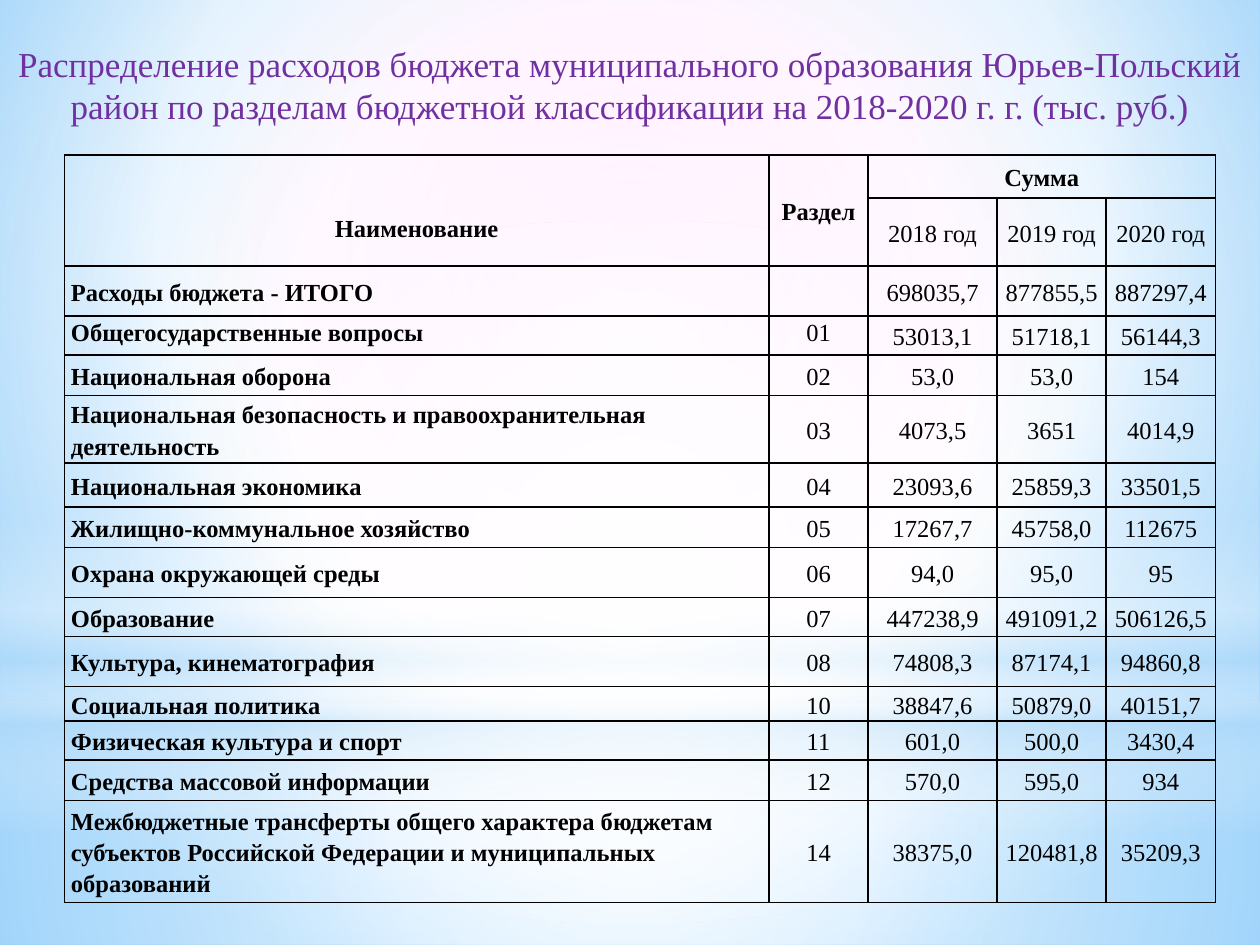
from lxml import etree
from pptx import Presentation
from pptx.dml.color import RGBColor
from pptx.enum import shapes, text
from pptx.oxml import parse_xml
from pptx.oxml.ns import qn
from pptx.util import Cm, Pt

COLORS = {"title": "7030A0", "ink": "000000", "white": "FFFFFF",
          "pink": "FFCCFF", "sky": "5BB9FF", "pale": "B4DCFA"}
FONT = "Times New Roman"
TITLE = ("Распределение расходов бюджета муниципального образования Юрьев-Польский "
         "район по разделам бюджетной классификации на 2018-2020 г. г. (тыс. руб.)")
HEADER = [
    ("Наименование", "Раздел", "Сумма", "", ""),
    ("", "", "2018 год", "2019 год", "2020 год"),
]
EXPENSES = [
    ("Расходы бюджета - ИТОГО", "", "698035,7", "877855,5", "887297,4"),
    ("Общегосударственные вопросы", "01", "53013,1", "51718,1", "56144,3"),
    ("Национальная оборона", "02", "53,0", "53,0", "154"),
    ("Национальная безопасность и правоохранительная деятельность",
     "03", "4073,5", "3651", "4014,9"),
    ("Национальная экономика", "04", "23093,6", "25859,3", "33501,5"),
    ("Жилищно-коммунальное хозяйство", "05", "17267,7", "45758,0", "112675"),
    ("Охрана окружающей среды", "06", "94,0", "95,0", "95"),
    ("Образование", "07", "447238,9", "491091,2", "506126,5"),
    ("Культура, кинематография", "08", "74808,3", "87174,1", "94860,8"),
    ("Социальная политика", "10", "38847,6", "50879,0", "40151,7"),
    ("Физическая культура и спорт", "11", "601,0", "500,0", "3430,4"),
    ("Средства массовой информации", "12", "570,0", "595,0", "934"),
    ("Межбюджетные трансферты общего характера бюджетам субъектов "
     "Российской Федерации и муниципальных образований",
     "14", "38375,0", "120481,8", "35209,3"),
]
COLUMN_WIDTHS = [14.2, 2, 2.6, 2.2, 2.2]
ROW_HEIGHTS = [0.87, 1.37, 1.01, 0.79, 0.81, 1.35, 0.89, 0.81,
               1.01, 0.79, 1.01, 0.69, 0.79, 0.81, 2.06]
TIGHT_ROW = 3

RECTANGLE = shapes.MSO_SHAPE.RECTANGLE
OVAL = shapes.MSO_SHAPE.OVAL
CENTER = (50, 50, 50, 50)
BACKGROUND_STOPS = [(0, "pink", 100), (60, "white", 100), (100, "sky", 100)]
GLOWS = [
    (RECTANGLE, 14.17, 4.88, CENTER,
     [(0, "white", 91), (37, "white", 76), (100, "pale", 79)]),
    (RECTANGLE, 0, 14.17, CENTER,
     [(0, "white", 89), (48, "white", 62), (100, "pale", 79)]),
    (RECTANGLE, 10.46, 6.35, None,
     [(0, "white", 0), (29, "white", 30), (45, "pale", 40),
      (55, "white", 26), (65, "pale", 60), (100, "white", 0)]),
    (OVAL, 4.45, 14.17, CENTER, [(0, "white", 100), (56, "white", 0)]),
]


def apply_gradient(fill, parent, stops, focus):
    fill.solid()
    stop_xml = "".join(
        f'<a:gs pos="{position * 1000}"><a:srgbClr val="{COLORS[color]}">'
        f'<a:alpha val="{opacity * 1000}"/></a:srgbClr></a:gs>'
        for position, color, opacity in stops)
    if focus:
        sides = " ".join(f'{side}="{value * 1000}"' for side, value in zip("ltrb", focus))
        direction = f'<a:path path="circle"><a:fillToRect {sides}/></a:path>'
    else:
        direction = '<a:lin ang="5400000" scaled="0"/>'
    gradient = parse_xml(
        '<a:gradFill xmlns:a="http://schemas.openxmlformats.org/drawingml/2006/main" '
        f'rotWithShape="1"><a:gsLst>{stop_xml}</a:gsLst>{direction}</a:gradFill>')
    parent.replace(parent.find(qn("a:solidFill")), gradient)


def style_runs(paragraph, size, color, bold=False):
    for run in paragraph.runs:
        run.font.name = FONT
        run.font.size = Pt(size)
        run.font.bold = bold
        run.font.color.rgb = RGBColor.from_string(COLORS[color])


def add_borders(cell):
    properties = cell._tc.get_or_add_tcPr()
    for side in ("lnL", "lnR", "lnT", "lnB"):
        line = etree.SubElement(properties, qn(f"a:{side}"), w=str(Pt(1)))
        solid = etree.SubElement(line, qn("a:solidFill"))
        etree.SubElement(solid, qn("a:srgbClr"), val=COLORS["ink"])


def fill_cell(cell, value, row, column):
    add_borders(cell)
    cell.fill.background()
    cell.margin_left = cell.margin_right = Cm(0.13)
    cell.margin_top = cell.margin_bottom = 0
    cell.vertical_anchor = text.MSO_ANCHOR.MIDDLE
    cell.text_frame.text = value
    paragraph = cell.text_frame.paragraphs[0]
    is_name = column == 0 and row >= len(HEADER)
    paragraph.alignment = text.PP_ALIGN.LEFT if is_name else text.PP_ALIGN.CENTER
    paragraph.line_spacing = 0.77 if row == TIGHT_ROW and column < 2 else 1.15
    style_runs(paragraph, 14, "ink", bold=row == 0 or column == 0)


def add_expense_table(slide):
    rows = HEADER + EXPENSES
    frame = slide.shapes.add_table(
        len(rows), len(COLUMN_WIDTHS), Cm(1.3), Cm(3.12),
        Cm(sum(COLUMN_WIDTHS)), Cm(sum(ROW_HEIGHTS)))
    table = frame.table
    table.first_row = table.horz_banding = False
    for column, width in zip(table.columns, COLUMN_WIDTHS):
        column.width = Cm(width)
    for row, height in zip(table.rows, ROW_HEIGHTS):
        row.height = Cm(height)
    for row, values in enumerate(rows):
        for column, value in enumerate(values):
            fill_cell(table.cell(row, column), value, row, column)
    for column in (0, 1):
        table.cell(0, column).merge(table.cell(1, column))
    table.cell(0, 2).merge(table.cell(0, 4))
    table.cell(0, 0).margin_top = Cm(0.68)


def add_title(slide):
    box = slide.shapes.add_textbox(0, Cm(0.74), Cm(25.4), Cm(1.96))
    box.text_frame.word_wrap = True
    box.text_frame.text = TITLE
    paragraph = box.text_frame.paragraphs[0]
    paragraph.alignment = text.PP_ALIGN.CENTER
    style_runs(paragraph, 20, "title")


def main():
    presentation = Presentation()
    presentation.slide_width, presentation.slide_height = Cm(25.4), Cm(19.05)
    slide = presentation.slides.add_slide(presentation.slide_layouts[6])
    fill = slide.background.fill
    fill.solid()
    background = slide._element.cSld.find(qn("p:bg")).find(qn("p:bgPr"))
    apply_gradient(fill, background, BACKGROUND_STOPS, (20, 10, 20, 60))
    for kind, top, height, focus, stops in GLOWS:
        glow = slide.shapes.add_shape(kind, 0, Cm(top), Cm(25.4), Cm(height))
        glow.shadow.inherit = False
        glow.line.fill.background()
        apply_gradient(glow.fill, glow._element.spPr, stops, focus)
    add_title(slide)
    add_expense_table(slide)
    presentation.save("out.pptx")


if __name__ == "__main__":
    main()
